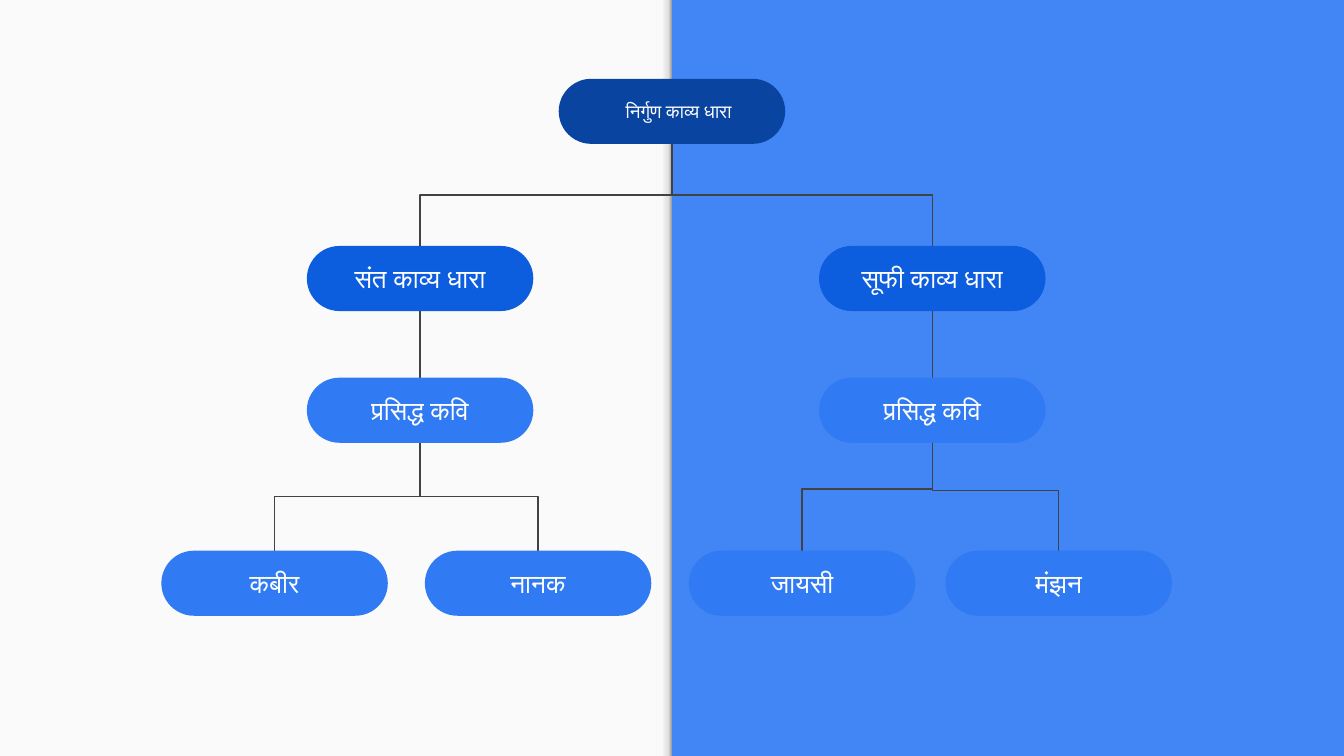
from dataclasses import dataclass, field

from lxml.etree import SubElement
from pptx import Presentation
from pptx.dml.color import RGBColor
from pptx.enum.shapes import MSO_CONNECTOR as CONN, MSO_SHAPE as SHAPE
from pptx.enum.text import MSO_ANCHOR as ANCHOR, PP_ALIGN as ALIGN
from pptx.oxml.ns import qn
from pptx.util import Cm, Pt

SLIDE_W, SLIDE_H = 25.4, 14.29
NODE_W, NODE_H = 4.28, 1.23
STRIP_W = 0.31
INSET = 0.25
LEVEL_TOPS = (1.49, 4.65, 7.14, 10.41)
LEVEL_FILLS = ("0944A1", "0D5DDF", "307BF3", "307BF3")
LINE = "424242"
STRIP_STOPS = ((0, "F9F9F9"), (36, "F9F9F9"), (80, "DEDEDE"), (100, "999999"))


@dataclass
class Node:
    text: str
    center: float
    children: list["Node"] = field(default_factory=list)
    bend: float = 0.5
    size: int = 14
    font: str = "Arial"
    indent: float = 0


TREE = Node("निर्गुण काव्य धारा", 12.7, [
    Node("संत काव्य धारा", 7.94, [
        Node("प्रसिद्ध कवि", 7.94, [
            Node("कबीर", 5.19),
            Node("नानक", 10.17),
        ]),
    ]),
    Node("सूफी काव्य धारा", 17.62, [
        Node("प्रसिद्ध कवि", 17.62, [
            Node("जायसी", 15.16, bend=0.43),
            Node("मंझन", 20.01, bend=0.44),
        ]),
    ]),
], size=10, font="Roboto", indent=0.25)


def rgb(color: str) -> RGBColor:
    return RGBColor.from_string(color)


def add_box(s, kind, x: float, y: float, w: float, h: float, color: str):
    sp = s.shapes.add_shape(kind, Cm(x), Cm(y), Cm(w), Cm(h))
    sp.shadow.inherit = False
    sp.fill.solid()
    sp.fill.fore_color.rgb = rgb(color)
    sp.line.fill.background()
    return sp


def add_edge_shade(s) -> None:
    sp = add_box(s, SHAPE.RECTANGLE, SLIDE_W / 2 - STRIP_W, 0, STRIP_W, SLIDE_H, "F9F9F9")
    sp.fill.gradient()
    sp.fill.gradient_angle = 0
    stops = sp._element.spPr.find(qn("a:gradFill")).find(qn("a:gsLst"))
    for stop in list(stops):
        stops.remove(stop)
    for pos, color in STRIP_STOPS:
        stop = SubElement(stops, qn("a:gs"), pos=str(pos * 1000))
        SubElement(stop, qn("a:srgbClr"), val=color)


def add_link(s, x1: float, y1: float, x2: float, y2: float, bend: float) -> None:
    if x1 == x2:
        cxn = s.shapes.add_connector(CONN.STRAIGHT, Cm(x1), Cm(y1), Cm(x2), Cm(y2))
    else:
        w, h = y2 - y1, abs(x2 - x1)
        left, top = (x1 + x2 - w) / 2, (y1 + y2 - h) / 2
        cxn = s.shapes.add_connector(CONN.ELBOW, Cm(left), Cm(top), Cm(left + w), Cm(top + h))
        xfrm = cxn._element.spPr.find(qn("a:xfrm"))
        xfrm.set("rot", str((270 if x2 > x1 else 90) * 60000))
        if x2 > x1:
            xfrm.set("flipH", "1")
        guides = cxn._element.spPr.find(qn("a:prstGeom")).find(qn("a:avLst"))
        SubElement(guides, qn("a:gd"), name="adj1", fmla=f"val {round(bend * 100000)}")
    cxn.line.color.rgb = rgb(LINE)
    cxn.line.width = Pt(0.75)
    SubElement(cxn._element.spPr, qn("a:effectLst"))


def add_node(s, node: Node, level: int = 0) -> None:
    top = LEVEL_TOPS[level]
    sp = add_box(s, SHAPE.ROUNDED_RECTANGLE, node.center - NODE_W / 2, top,
                 NODE_W, NODE_H, LEVEL_FILLS[level])
    sp.adjustments[0] = 0.5
    tf = sp.text_frame
    tf.word_wrap = True
    tf.vertical_anchor = ANCHOR.MIDDLE
    tf.margin_left = Cm(INSET + node.indent)
    tf.margin_right = tf.margin_top = tf.margin_bottom = Cm(INSET)
    p = tf.paragraphs[0]
    p.text = node.text
    p.alignment = ALIGN.CENTER
    p.font.size = Pt(node.size)
    p.font.name = node.font
    p.font.color.rgb = rgb("FFFFFF")
    for child in node.children:
        add_link(s, node.center, top + NODE_H, child.center, LEVEL_TOPS[level + 1], child.bend)
        add_node(s, child, level + 1)


def main() -> None:
    prs = Presentation()
    prs.slide_width, prs.slide_height = Cm(SLIDE_W), Cm(SLIDE_H)
    s = prs.slides.add_slide(prs.slide_layouts[6])
    s.background.fill.solid()
    s.background.fill.fore_color.rgb = rgb("4285F4")
    add_box(s, SHAPE.RECTANGLE, 0, 0, SLIDE_W / 2, SLIDE_H, "FAFAFA")
    add_edge_shade(s)
    add_node(s, TREE)
    prs.save("out.pptx")


if __name__ == "__main__":
    main()
